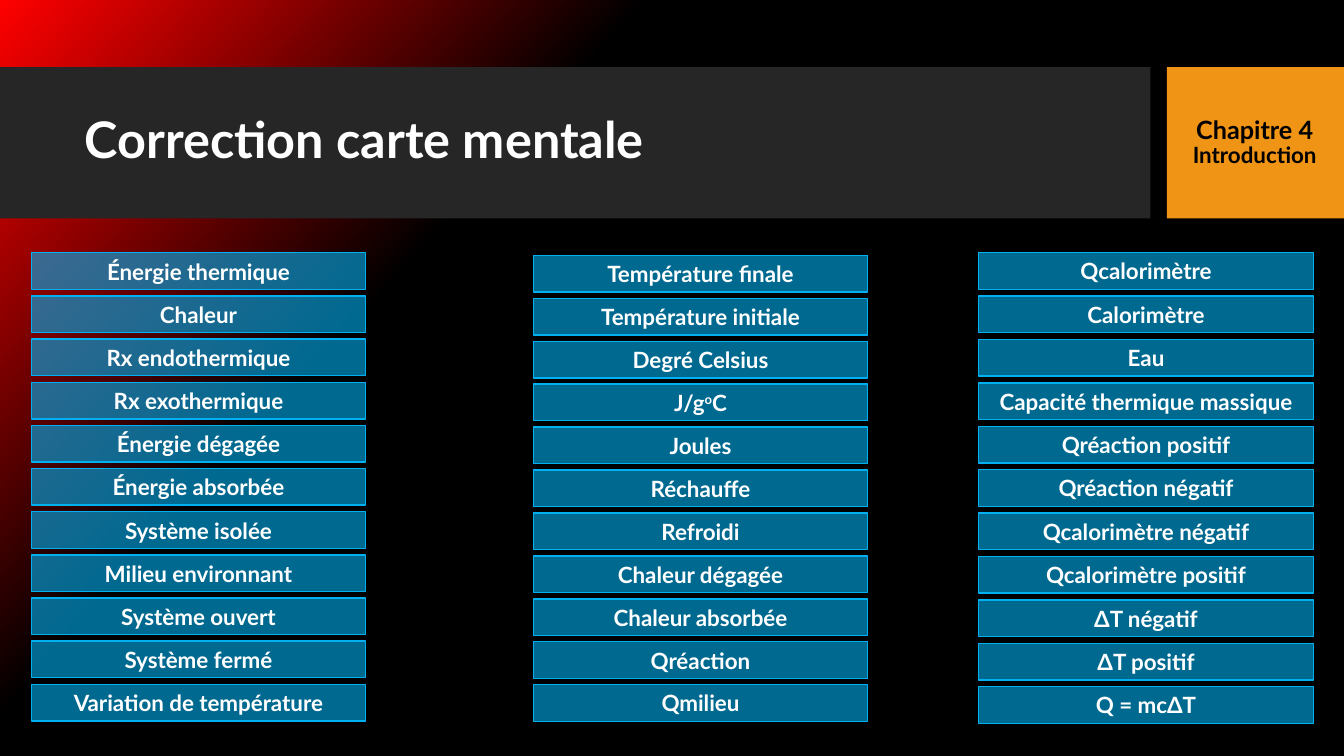
from copy import deepcopy

from lxml.etree import SubElement
from pptx import Presentation
from pptx.dml.color import RGBColor
from pptx.enum.shapes import MSO_SHAPE
from pptx.enum.text import MSO_ANCHOR, PP_ALIGN
from pptx.oxml.ns import qn
from pptx.util import Pt

COLORS = {
    "red": "FF0000",
    "black": "000000",
    "white": "FFFFFF",
    "band": "262626",
    "orange": "F09415",
    "cyan": "00B0F0",
}
FONT = "Lato"

COLUMNS = [
    (22.3, 180.6, 30.82, [
        "Énergie thermique", "Chaleur", "Rx endothermique", "Rx exothermique",
        "Énergie dégagée", "Énergie absorbée", "Système isolée",
        "Milieu environnant", "Système ouvert", "Système fermé",
        "Variation de température",
    ]),
    (380.9, 182.4, 30.67, [
        "Température finale", "Température initiale", "Degré Celsius",
        "J/g^o^C", "Joules", "Réchauffe", "Refroidi", "Chaleur dégagée",
        "Chaleur absorbée", "Qréaction", "Qmilieu",
    ]),
    (699.1, 180.5, 31, [
        "Qcalorimètre", "Calorimètre", "Eau", "Capacité thermique massique",
        "Qréaction positif", "Qréaction négatif", "Qcalorimètre négatif",
        "Qcalorimètre positif", "ΔT négatif", "ΔT positif", "Q = mcΔT",
    ]),
]


def rgb(name):
    return RGBColor.from_string(COLORS[name])


def write(shape, lines, color="white", align=PP_ALIGN.CENTER, spacing=1.0):
    """Write (text, size) lines; text between carets is raised."""
    frame = shape.text_frame
    frame.word_wrap = True
    frame.vertical_anchor = MSO_ANCHOR.MIDDLE
    for i, (text, size) in enumerate(lines):
        para = frame.add_paragraph() if i else frame.paragraphs[0]
        para.alignment = align
        para.line_spacing = spacing
        for j, part in enumerate(text.split("^")):
            run = para.add_run()
            run.text = part
            font = run.font
            font.name, font.size, font.bold = FONT, Pt(size), True
            font.color.rgb = rgb(color)
            if j % 2:
                run._r.get_or_add_rPr().set("baseline", "30000")


class Deck:
    """Hold the show and its current slide."""

    def __init__(self):
        self.show = Presentation()
        self.show.slide_width, self.show.slide_height = Pt(960), Pt(540)
        self.slide = self.show.slides.add_slide(self.show.slide_layouts[6])

    def backdrop(self):
        fill = self.slide.background.fill
        fill.gradient()
        fill.gradient_angle = 318
        start, end = fill.gradient_stops
        start.color.rgb, start.position = rgb("red"), 0
        end.color.rgb, end.position = rgb("black"), 0.32
        mark = list(self.slide.element.iter(qn("a:gs")))[-1]
        last = deepcopy(mark)
        last.set("pos", "100000")
        mark.addnext(last)

    def rect(self, x, y, w, h, color, alpha=None, line=None):
        box = self.slide.shapes.add_shape(
            MSO_SHAPE.RECTANGLE, Pt(x), Pt(y), Pt(w), Pt(h))
        box.shadow.inherit = False
        box.fill.solid()
        box.fill.fore_color.rgb = rgb(color)
        if alpha:
            tint = next(box.element.spPr.iter(qn("a:srgbClr")))
            SubElement(tint, qn("a:alpha")).set("val", str(alpha * 1000))
        if line:
            box.line.color.rgb = rgb(line)
            box.line.width = Pt(1)
        else:
            box.line.fill.background()
        return box

    def label(self, x, y, w, h, lines, **style):
        box = self.slide.shapes.add_textbox(Pt(x), Pt(y), Pt(w), Pt(h))
        write(box, lines, spacing=0.9, **style)

    def column(self, x, y, pitch, terms):
        for i, term in enumerate(terms):
            box = self.rect(x, y + i * pitch, 239, 26.2, "cyan", 60, "cyan")
            write(box, [(term, 16)])


def main():
    deck = Deck()
    deck.backdrop()
    deck.rect(0, 48, 821.7, 108, "band")
    deck.rect(833.5, 48, 126.5, 108, "orange")
    deck.label(832.5, 48, 127.5, 108.5,
               [("Chapitre 4", 18), ("Introduction", 16)], color="black")
    for column in COLUMNS:
        deck.column(*column)
    deck.label(53.5, 59, 757, 85, [("Correction carte mentale", 36)],
               align=PP_ALIGN.LEFT)
    deck.show.save("out.pptx")


if __name__ == "__main__":
    main()
